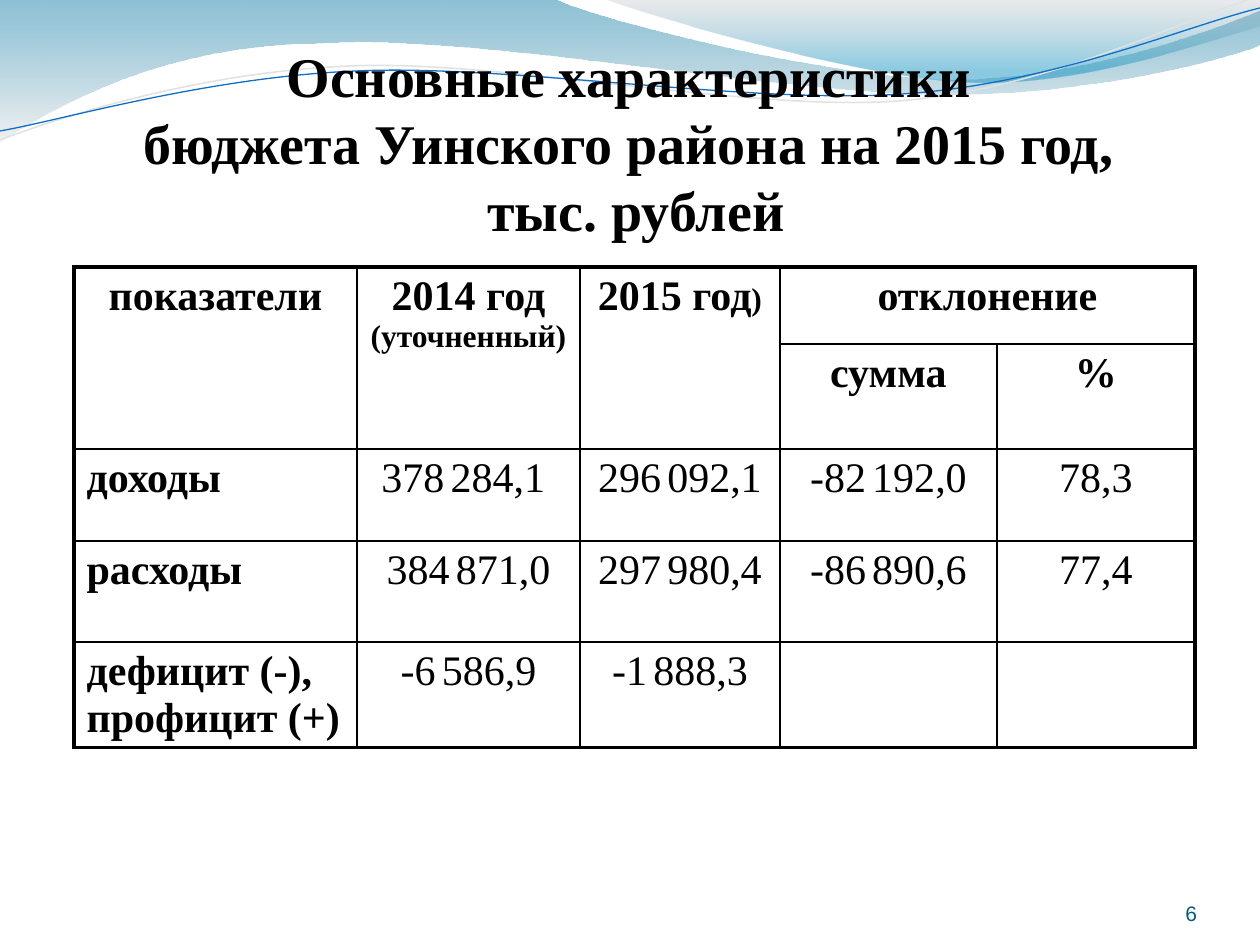
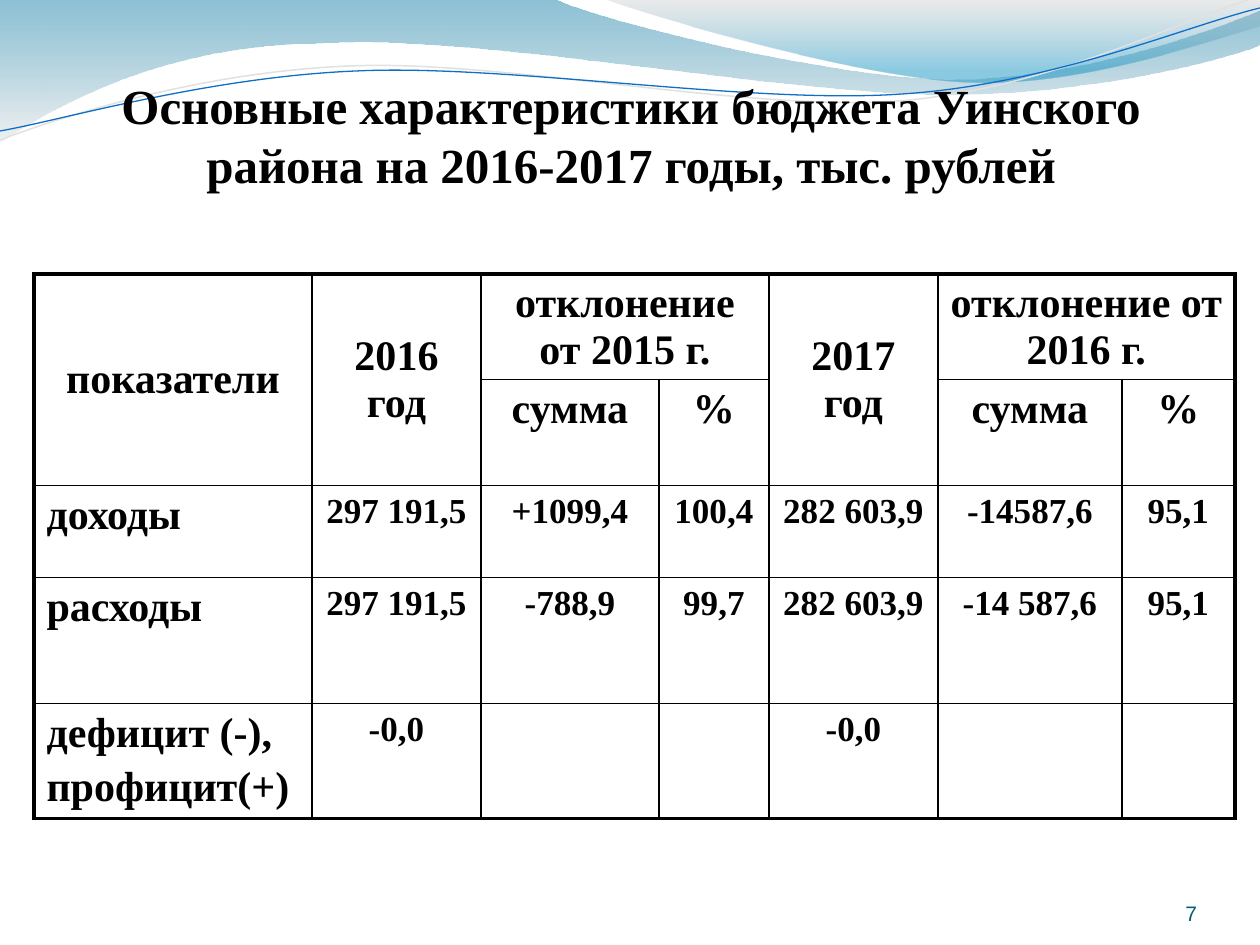
from copy import deepcopy
from dataclasses import dataclass

from lxml import etree
from pptx import Presentation, util as u
from pptx.dml.color import RGBColor
from pptx.enum import text as t
from pptx.oxml import ns

PX = 914400 / 126


@dataclass(frozen=True)
class Theme:
    """Colours, fonts and type sizes of the deck."""
    ink: str = "000000"
    page: str = "045D75"
    deep: str = "0074A1"
    mist: str = "E7E7E7"
    silver: str = "BDBDBD"
    aqua: str = "008BBF"
    pale_line: str = "E1E1E1"
    blue_line: str = "0F6FC6"
    serif: str = "Times New Roman"
    sans: str = "Arial"
    body: int = 24
    figure: int = 20
    small: int = 18
    gap: int = 14
    footer: int = 12
    outer: float = 2.25
    inner: float = 1


T = Theme()
LEFT, CENTER, RIGHT = t.PP_ALIGN.LEFT, t.PP_ALIGN.CENTER, t.PP_ALIGN.RIGHT
TOP, MIDDLE, BOTTOM = t.MSO_ANCHOR.TOP, t.MSO_ANCHOR.MIDDLE, t.MSO_ANCHOR.BOTTOM

LEFT_BAND = [(0, -1), (554, -1), (600, 21, 837, 79, 955, 79),
             (1075, 79, 1207, 33, 1260, 11), (1261, 45),
             (1239, 55, 1096, 96, 940, 94), (781, 94, 481, 35, 324, 43),
             (163, 44, 58, 105, -1, 142), (0, -1)]
RIGHT_BAND = [(604, -1), (641, 14, 859, 78, 969, 82),
              (1079, 87, 1211, 40, 1260, 26), (1260, 0), (604, -1)]
PALE_WAVE = [(0, 140), (60, 117, 199, 72, 349, 66),
             (498, 59, 747, 112, 898, 101), (1050, 89, 1182, 19, 1257, -3)]
BLUE_WAVE = [(0, 131), (59, 121, 207, 77, 357, 71),
             (508, 64, 752, 105, 903, 94), (1053, 84, 1186, 26, 1260, 8)]


def px(*values):
    """Turn px lengths into EMU."""
    return [u.Emu(round(v * PX)) for v in values]


def rgb(color):
    """Return a colour from its hex string."""
    return RGBColor.from_string(color)


def write(tf, content, size=T.body, color=T.ink, font=T.serif, bold=False,
          align=LEFT):
    """Write a string or a list of (text, size) runs; a newline starts a paragraph."""
    blocks = ([[(line, size)] for line in content.split("\n")]
              if isinstance(content, str) else [content])
    for i, runs in enumerate(blocks):
        p = tf.add_paragraph() if i else tf.paragraphs[0]
        p.alignment = align
        if i:
            p.space_before = u.Pt(size * 0.2)
        for words, points in runs:
            for j, part in enumerate(words.split("\v")):
                if j:
                    p.add_line_break()
                    p._p[-1].append(deepcopy(r._r.rPr))
                r = p.add_run()
                r.text = part
                r.font.size, r.font.bold, r.font.name = u.Pt(points), bold, font
                r.font.color.rgb = rgb(color)


def set_frame(tf, anchor, top=0):
    """Give a text frame wrapping, an anchor and zero insets except the top."""
    tf.auto_size, tf.word_wrap = t.MSO_AUTO_SIZE.NONE, True
    tf.vertical_anchor = anchor
    tf.margin_left, tf.margin_top, tf.margin_right, tf.margin_bottom = px(0, top, 0, 0)


def add_outline(s, outline, close):
    """Build a shadowless freeform from straight and cubic segments."""
    start, *segments = outline
    points = [px(*seg[i:i + 2]) for seg in segments for i in range(0, len(seg), 2)]
    builder = s.shapes.build_freeform(*px(*start), scale=1.0)
    builder.add_line_segments(points, close=close)
    sp = builder.convert_to_shape()
    sp.shadow.inherit = False
    lines = iter(list(sp._element.spPr.iter(ns.qn("a:lnTo"))))
    for seg in segments:
        first = next(lines)
        if len(seg) == 6:
            first.tag = ns.qn("a:cubicBezTo")
            for extra in (next(lines), next(lines)):
                first.append(extra[0])
                extra.getparent().remove(extra)
    return sp


def add_band(s, outline, stops):
    """Draw a translucent band; stops are (position, colour, opacity)."""
    sp = add_outline(s, outline, True)
    sp.line.fill.background()
    sp.fill.gradient()
    sp.fill.gradient_angle = 270
    for stop, (position, color, _) in zip(sp.fill.gradient_stops, stops):
        stop.position, stop.color.rgb = position, rgb(color)
    colors = sp._element.spPr.iter(ns.qn("a:srgbClr"))
    for clr, (_, _, opacity) in zip(colors, stops):
        etree.SubElement(clr, ns.qn("a:alpha"), val=str(opacity * 1000))
    return sp


def add_wave(s, outline, color, width):
    """Draw a thin wavy line."""
    sp = add_outline(s, outline, False)
    sp.fill.background()
    sp.line.color.rgb, sp.line.width = rgb(color), u.Pt(width)
    return sp


def decorate_layout(layout, s):
    """Draw the header waves on a slide and hand them over to its layout."""
    parts = [add_band(s, LEFT_BAND, [(0, T.deep, 45), (1, T.mist, 55)]),
             add_band(s, RIGHT_BAND, [(0, T.silver, 30), (0.8, T.aqua, 45)]),
             add_wave(s, PALE_WAVE, T.pale_line, 0.85),
             add_wave(s, BLUE_WAVE, T.blue_line, 0.75)]
    for i, sp in enumerate(parts):
        sp._element.nvSpPr.cNvPr.set("id", str(20 + i))
        layout.shapes._spTree.append(sp._element)


def set_title(s, box, words, size):
    """Place and format the title placeholder."""
    title = s.shapes.title
    title.left, title.top, title.width, title.height = px(*box)
    set_frame(title.text_frame, BOTTOM, top=6)
    write(title.text_frame, words, size=size, bold=True, align=CENTER)


def add_page_number(s, number):
    """Add the page number at the lower right."""
    tf = s.shapes.add_textbox(*px(1092, 876, 105, 50)).text_frame
    set_frame(tf, BOTTOM)
    write(tf, str(number), size=T.footer, color=T.page, font=T.sans, align=RIGHT)


def set_borders(cell, edges):
    """Rule a cell; edges tells which of left, right, top, bottom are outer."""
    tc_pr = cell._tc.get_or_add_tcPr()
    for i, (side, is_outer) in enumerate(zip("LRTB", edges)):
        ln = etree.Element(ns.qn(f"a:ln{side}"),
                           w=str(u.Pt(T.outer if is_outer else T.inner)))
        fill = etree.SubElement(ln, ns.qn("a:solidFill"))
        etree.SubElement(fill, ns.qn("a:srgbClr"), val=T.ink)
        tc_pr.insert(i, ln)


def add_budget_table(s, origin, cols, rows, grid, merges, size, bold,
                     head_anchor):
    """Add a table with two header rows and bold row labels."""
    n_rows, n_cols = len(rows), len(cols)
    frame = s.shapes.add_table(n_rows, n_cols, *px(*origin, sum(cols), sum(rows)))
    table = frame.table
    table.first_row = table.horz_banding = False
    for col, width in zip(table.columns, px(*cols)):
        col.width = width
    for row, height in zip(table.rows, px(*rows)):
        row.height = height
    for r1, c1, r2, c2 in merges:
        table.cell(r1, c1).merge(table.cell(r2, c2))
    for r, line in enumerate(grid):
        for c, content in enumerate(line):
            cell = table.cell(r, c)
            is_head, is_label = r < 2, c == 0
            cell.fill.background()
            set_borders(cell, (c == 0, c + cell.span_width == n_cols,
                               r == 0, r + cell.span_height == n_rows))
            cell.vertical_anchor = head_anchor if cell.span_height > 1 else TOP
            if content:
                write(cell.text_frame, content,
                      size=T.body if is_head or is_label else size,
                      bold=is_head or is_label or bold,
                      align=LEFT if is_label and not is_head else CENTER)


def thousands(value):
    """Split a figure into runs with a narrow thousands gap."""
    head, tail = value.split(" ", 1)
    return [(head, T.body), (" ", T.gap), (tail, T.body)]


def build_2015(s):
    """Fill the slide with the budget for 2015."""
    set_title(s, (74, 35, 1124, 208),
              "Основные характеристики \vбюджета Уинского района на 2015 год, \v"
              "тыс. рублей", 32)
    grid = [
        ["показатели", [("2014 год ", T.body), ("(уточненный)", T.small)],
         [("2015 год", T.body), (")", T.small)], "отклонение", ""],
        ["", "", "", "сумма", "%"],
        ["доходы", *map(thousands, ("378 284,1 ", "296 092,1", "-82 192,0")), "78,3"],
        ["расходы", *map(thousands, ("384 871,0", "297 980,4", "-86 890,6")), "77,4"],
        ["дефицит (-), профицит (+)", *map(thousands, ("-6 586,9", "-1 888,3")), "", ""],
    ]
    merges = [(0, c, 1, c) for c in range(3)] + [(0, 3, 0, 4)]
    add_budget_table(s, (74, 267), (283, 223, 200, 217, 198),
                     (77, 105, 92, 101, 105), grid, merges,
                     size=T.body, bold=False, head_anchor=TOP)


def build_2016_2017(s):
    """Fill the slide with the budget for 2016 and 2017."""
    set_title(s, (64, 35, 1134, 158),
              "Основные характеристики бюджета Уинского района на 2016-2017 годы, "
              "тыс. рублей", 28)
    grid = [
        ["показатели", "2016 год", "отклонение от 2015 г.", "",
         "2017 год", "отклонение от 2016 г.", ""],
        ["", "", "сумма", "%", "", "сумма", "%"],
        ["доходы", "297 191,5", "+1099,4", "100,4", "282 603,9", "-14587,6", "95,1"],
        ["расходы", "297 191,5", "-788,9", "99,7", "282 603,9", "-14 587,6", "95,1"],
        ["дефицит (-),\nпрофицит(+)", "-0,0", "", "", "-0,0", "", ""],
    ]
    merges = [(0, c, 1, c) for c in (0, 1, 4)] + [(0, c, 0, c + 1) for c in (2, 5)]
    add_budget_table(s, (34, 274), (278, 169, 178, 110, 169, 184, 113),
                     (105, 106, 92, 126, 115), grid, merges,
                     size=T.figure, bold=True, head_anchor=MIDDLE)


def main():
    """Build and save the deck."""
    prs = Presentation()
    prs.slide_width, prs.slide_height = px(1260, 945)
    layout = prs.slide_layouts[5]
    for number, build in enumerate((build_2015, build_2016_2017), start=6):
        s = prs.slides.add_slide(layout)
        if len(prs.slides) == 1:
            decorate_layout(layout, s)
        add_page_number(s, number)
        build(s)
    prs.save("out.pptx")


if __name__ == "__main__":
    main()
